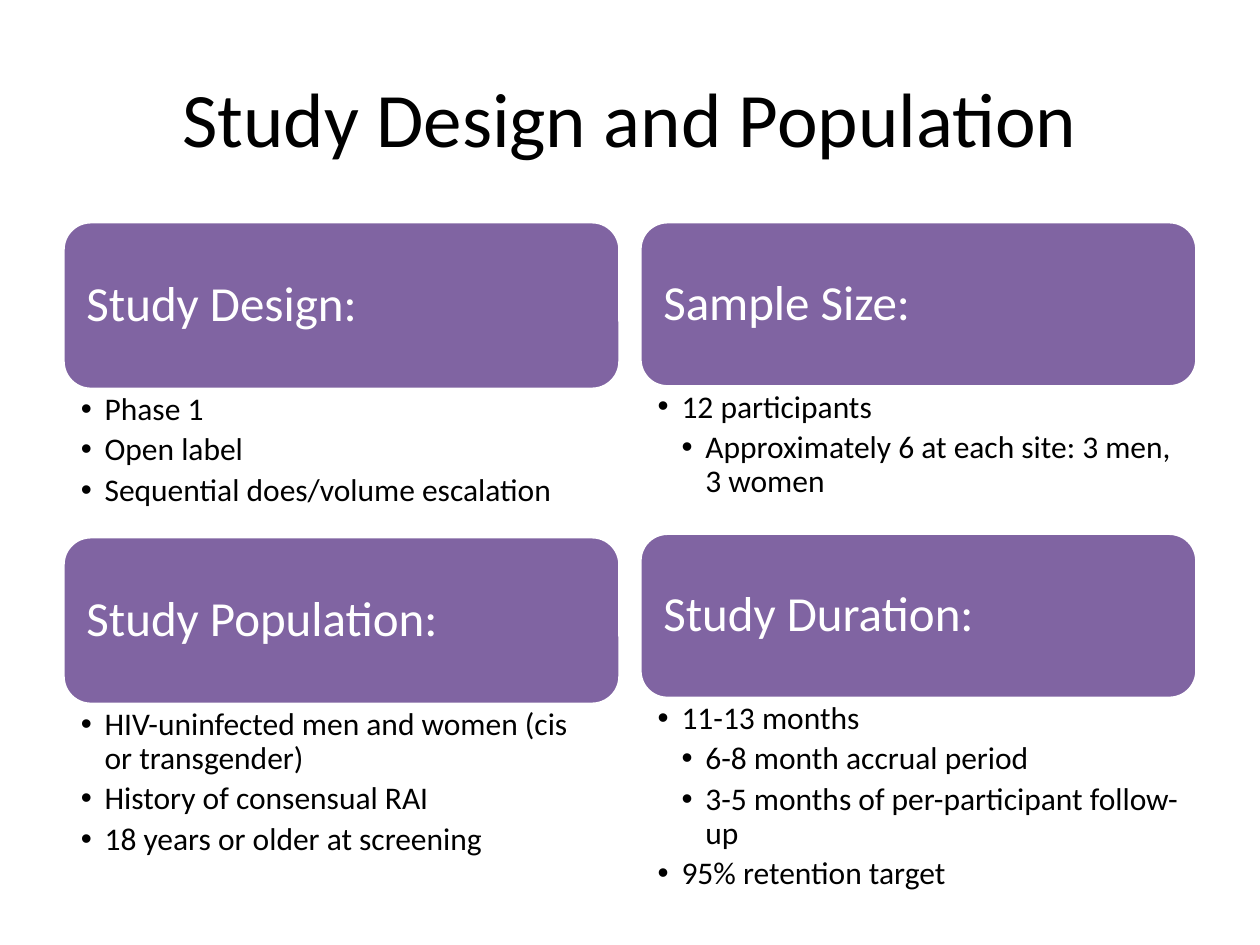
from lxml.etree import SubElement
from pptx import Presentation
from pptx.dml.color import RGBColor
from pptx.enum.shapes import MSO_SHAPE as Shape
from pptx.enum.text import MSO_ANCHOR as Anchor, PP_ALIGN as Align
from pptx.oxml.ns import qn
from pptx.util import Cm, Pt

PURPLE = RGBColor(0x80, 0x64, 0xA2)
WHITE = RGBColor(0xFF, 0xFF, 0xFF)
BLACK = RGBColor(0, 0, 0)
FONT = "Calibri"
INDENT = 0.48
COLUMN_WIDTH = 11.23
COLUMN_TOP = 4.47

# Each column: left edge, header height, panels of (heading, body height, bullets).
# Each bullet: (level, text).
COLUMNS = [
    (1.27, 3.38, [
        ("Study Design:", 2.97, [
            (1, "Phase 1"),
            (1, "Open label"),
            (1, "Sequential does/volume escalation")]),
        ("Study Population:", 3.28, [
            (1, "HIV-uninfected men and women (cis or transgender)"),
            (1, "History of consensual RAI"),
            (1, "18 years or older at screening")]),
    ]),
    (12.9, 3.33, [
        ("Sample Size:", 2.95, [
            (1, "12 participants"),
            (2, "Approximately 6 at each site: 3 men, 3 women")]),
        ("Study Duration:", 4.14, [
            (1, "11-13 months"),
            (2, "6-8 month accrual period"),
            (2, "3-5 months of per-participant follow-up"),
            (1, "95% retention target")]),
    ]),
]


def set_frame(frame, side, edge, anchor):
    frame.word_wrap = True
    frame.vertical_anchor = anchor
    frame.margin_left = frame.margin_right = Cm(side)
    frame.margin_top = frame.margin_bottom = Cm(edge)


def add_span(para, text, size, color):
    span = para.add_run()
    span.text = text
    span.font.name = FONT
    span.font.size = Pt(size)
    span.font.color.rgb = color


def add_bullet(para, level):
    para.level = level
    props = para._p.get_or_add_pPr()
    props.set("marL", str(Cm(INDENT * level)))
    props.set("indent", str(-Cm(INDENT)))
    SubElement(props, qn("a:buFont"), typeface="Arial")
    SubElement(props, qn("a:buChar"), char="•")


def add_title(page, left, top, width, height):
    box = page.shapes.add_textbox(Cm(left), Cm(top), Cm(width), Cm(height))
    set_frame(box.text_frame, 0.25, 0.13, Anchor.MIDDLE)
    para = box.text_frame.paragraphs[0]
    para.alignment = Align.CENTER
    add_span(para, "Study Design and Population", 44, BLACK)


def add_header(page, left, top, width, height, heading):
    box = page.shapes.add_shape(
        Shape.ROUNDED_RECTANGLE, Cm(left), Cm(top), Cm(width), Cm(height))
    box.shadow.inherit = False
    box.fill.solid()
    box.fill.fore_color.rgb = PURPLE
    box.line.color.rgb = WHITE
    box.line.width = Pt(2)
    # The preset's own text area is already inset by its rounded corners
    set_frame(box.text_frame, 0.31, 0.31, Anchor.MIDDLE)
    para = box.text_frame.paragraphs[0]
    para.alignment = Align.LEFT
    para.line_spacing = 0.9
    add_span(para, heading, 28, WHITE)


def add_body(page, left, top, width, height, bullets):
    box = page.shapes.add_textbox(Cm(left), Cm(top), Cm(width), Cm(height))
    frame = box.text_frame
    set_frame(frame, 0.36, 0.08, Anchor.TOP)
    for index, (level, text) in enumerate(bullets):
        para = frame.add_paragraph() if index else frame.paragraphs[0]
        add_bullet(para, level)
        para.line_spacing = 0.9
        para.space_after = Pt(3.6)
        add_span(para, text, 18, BLACK)


def add_column(page, left, top, width, header_height, panels):
    for heading, body_height, bullets in panels:
        add_header(page, left, top, width, header_height, heading)
        top += header_height
        add_body(page, left, top, width, body_height, bullets)
        top += body_height


def main():
    deck = Presentation()
    deck.slide_width, deck.slide_height = Cm(25.4), Cm(19.05)
    page = deck.slides.add_slide(deck.slide_layouts[6])
    add_title(page, 1.27, 0.76, 22.86, 3.18)
    for left, header_height, panels in COLUMNS:
        add_column(page, left, COLUMN_TOP, COLUMN_WIDTH, header_height, panels)
    deck.save("out.pptx")


if __name__ == "__main__":
    main()
